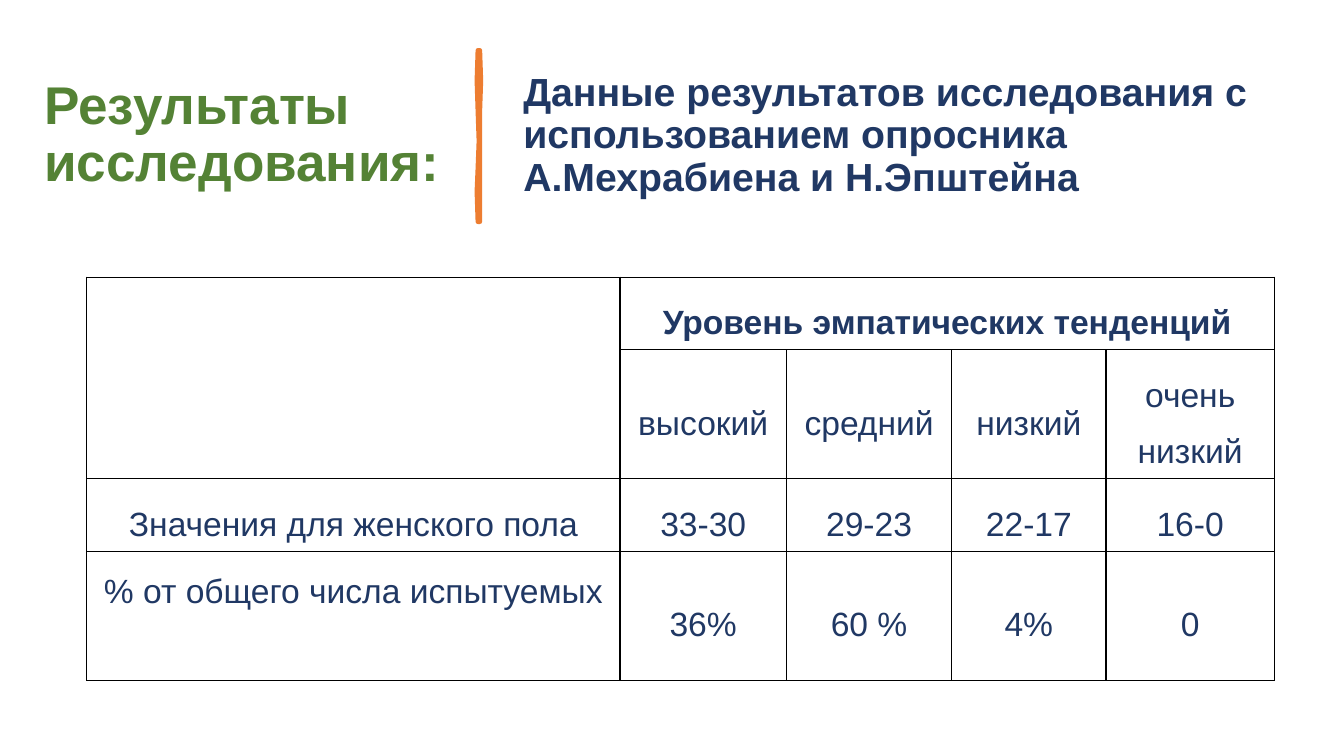
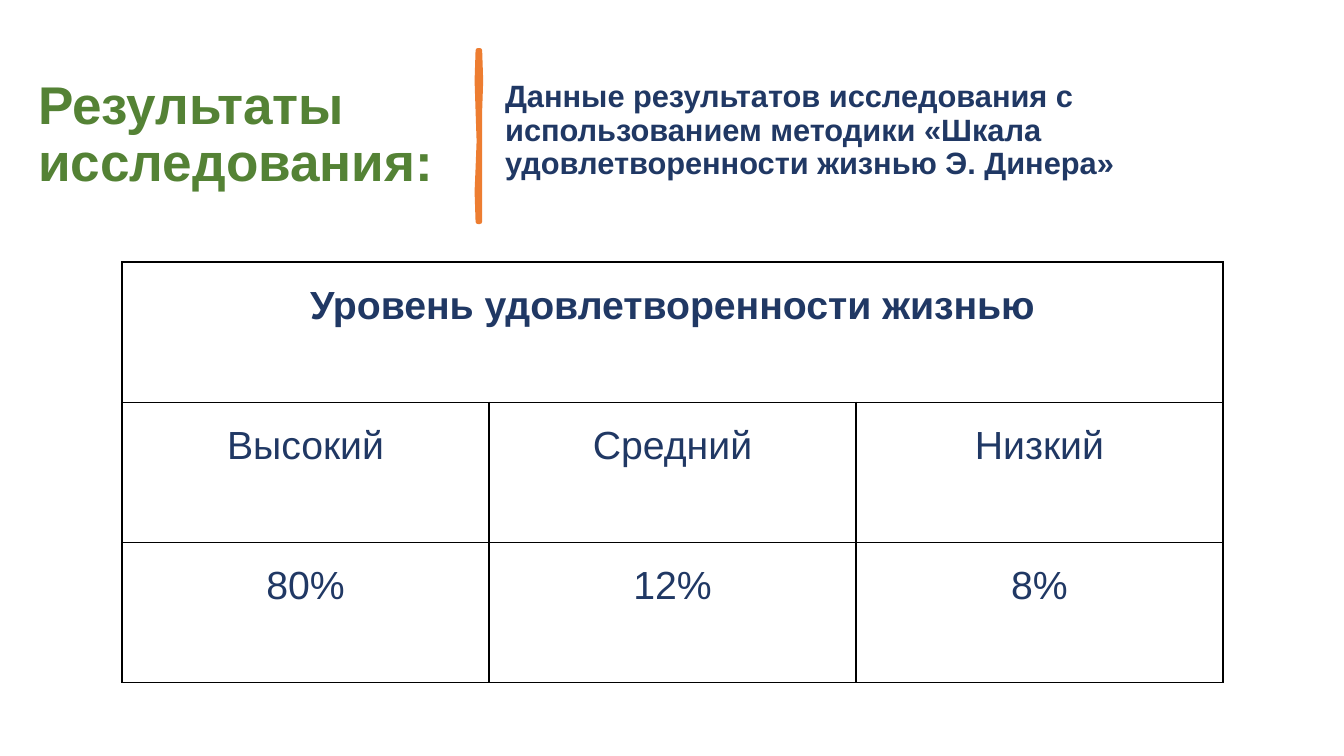
"""Build two slides of survey results, each with a heading and a table."""
from dataclasses import dataclass

from lxml.etree import SubElement
from pptx import Presentation
from pptx.dml.color import RGBColor
from pptx.enum.text import MSO_ANCHOR, MSO_AUTO_SIZE, PP_ALIGN
from pptx.oxml.ns import qn
from pptx.util import Inches, Pt


@dataclass(frozen=True)
class Theme:
    font: str = "Arial"
    green: RGBColor = RGBColor(0x54, 0x82, 0x35)
    navy: RGBColor = RGBColor(0x20, 0x38, 0x64)
    orange: RGBColor = RGBColor(0xED, 0x7D, 0x31)
    white: RGBColor = RGBColor(0xFF, 0xFF, 0xFF)
    border: str = "000000"
    title_size: float = 37.9
    divider_width: float = 3.25
    border_width: float = 1


theme = Theme()

DIVIDER_POINTS = [
    (4.76, 0.5), (4.77, 0.8), (4.76, 1.1), (4.76, 1.68), (4.76, 2.2),
    (4.74, 2.2), (4.73, 1.9), (4.74, 1.67), (4.75, 1.4), (4.74, 1.1),
    (4.73, 0.8), (4.74, 0.5),
]

SLIDES = [
    {
        "title_box": (0.34, 0.55, 4.19, 1.6),
        "subtitle": "Данные результатов исследования с использованием опросника "
                    "А.Мехрабиена и Н.Эпштейна",
        "subtitle_box": (5.09, 0.55, 7.54, 1.6),
        "subtitle_size": 28,
        "table_at": (0.86, 2.75),
        "columns": [5.29, 1.65, 1.64, 1.53, 1.67],
        "rows": [0.72, 1.28, 0.72, 1.28],
        "cells": [
            ["", "Уровень эмпатических тенденций", "", "", ""],
            ["", "высокий", "средний", "низкий", "очень низкий"],
            ["Значения для женского пола", "33-30", "29-23", "22-17", "16-0"],
            ["% от общего числа испытуемых", "36%", "60 %", "4%", "0"],
        ],
        "merges": [((0, 0), (1, 0)), ((0, 1), (0, 4))],
        "table_size": 24,
        "margins": (0.03, 0.03),
        "anchor": MSO_ANCHOR.MIDDLE,
        "top_cells": [(3, 0)],
    },
    {
        "title_box": (0.28, 0.55, 4.15, 1.6),
        "subtitle": "Данные результатов исследования с использованием методики "
                    "«Шкала удовлетворенности жизнью Э. Динера»",
        "subtitle_box": (4.91, 0.5, 8.08, 1.6),
        "subtitle_size": 22,
        "table_at": (1.21, 2.6),
        "columns": [3.64] * 3,
        "rows": [1.39] * 3,
        "cells": [
            ["Уровень удовлетворенности жизнью", "", ""],
            ["Высокий", "Средний", "Низкий"],
            ["80%", "12%", "8%"],
        ],
        "merges": [((0, 0), (0, 2))],
        "table_size": 28,
        "margins": (0.07, 0),
        "anchor": MSO_ANCHOR.TOP,
        "top_cells": [],
    },
]


def write_text(paragraph, text, size, color, bold, spacing, alignment):
    paragraph.alignment = alignment
    paragraph.line_spacing = spacing
    run = paragraph.add_run()
    run.text = text
    run.font.name = theme.font
    run.font.size = Pt(size)
    run.font.bold = bold
    run.font.color.rgb = color


def format_cell(cell, margins, anchor):
    cell.margin_left = cell.margin_right = Inches(margins[0])
    cell.margin_top = cell.margin_bottom = Inches(margins[1])
    cell.vertical_anchor = anchor
    properties = cell._tc.get_or_add_tcPr()
    for side in ("a:lnL", "a:lnR", "a:lnT", "a:lnB"):
        border = SubElement(properties, qn(side), w=str(Pt(theme.border_width)))
        fill = SubElement(border, qn("a:solidFill"))
        SubElement(fill, qn("a:srgbClr"), val=theme.border)
    cell.fill.solid()
    cell.fill.fore_color.rgb = theme.white


presentation = Presentation()
presentation.slide_width = Inches(13.33)
presentation.slide_height = Inches(7.5)

for content in SLIDES:
    slide = presentation.slides.add_slide(presentation.slide_layouts[1])
    title, subtitle = slide.placeholders
    headings = [
        (title, "Результаты исследования:", content["title_box"], theme.title_size, theme.green),
        (subtitle, content["subtitle"], content["subtitle_box"], content["subtitle_size"], theme.navy),
    ]
    for shape, text, box, size, color in headings:
        shape.left, shape.top, shape.width, shape.height = map(Inches, box)
        frame = shape.text_frame
        frame.word_wrap = True
        frame.auto_size = MSO_AUTO_SIZE.NONE
        frame.vertical_anchor = MSO_ANCHOR.MIDDLE
        paragraph = frame.paragraphs[0]
        properties = paragraph._p.get_or_add_pPr()
        properties.set("marL", "0")
        properties.set("indent", "0")
        SubElement(properties, qn("a:buNone"))
        paragraph.space_before = Pt(0)
        write_text(paragraph, text, size, color, True, 0.9, PP_ALIGN.LEFT)

    points = [(Inches(x), Inches(y)) for x, y in DIVIDER_POINTS]
    builder = slide.shapes.build_freeform(*points[0])
    builder.add_line_segments(points[1:], close=True)
    divider = builder.convert_to_shape()
    divider.shadow.inherit = False
    divider.fill.solid()
    divider.fill.fore_color.rgb = theme.orange
    divider.line.color.rgb = theme.orange
    divider.line.width = Pt(theme.divider_width)
    SubElement(divider.element.spPr.find(qn("a:ln")), qn("a:round"))

    columns, rows = content["columns"], content["rows"]
    left, top = content["table_at"]
    table = slide.shapes.add_table(
        len(rows), len(columns), Inches(left), Inches(top),
        Inches(sum(columns)), Inches(sum(rows)),
    ).table
    table.first_row = False
    table.horz_banding = False
    for column, width in zip(table.columns, columns):
        column.width = Inches(width)
    for row, height in zip(table.rows, rows):
        row.height = Inches(height)
    for row_index, texts in enumerate(content["cells"]):
        for column_index, text in enumerate(texts):
            cell = table.cell(row_index, column_index)
            is_top = (row_index, column_index) in content["top_cells"]
            anchor = MSO_ANCHOR.TOP if is_top else content["anchor"]
            format_cell(cell, content["margins"], anchor)
            if text:
                write_text(cell.text_frame.paragraphs[0], text, content["table_size"],
                           theme.navy, row_index == 0, 1.5, PP_ALIGN.CENTER)
    for first, last in content["merges"]:
        table.cell(*first).merge(table.cell(*last))

presentation.save("out.pptx")
